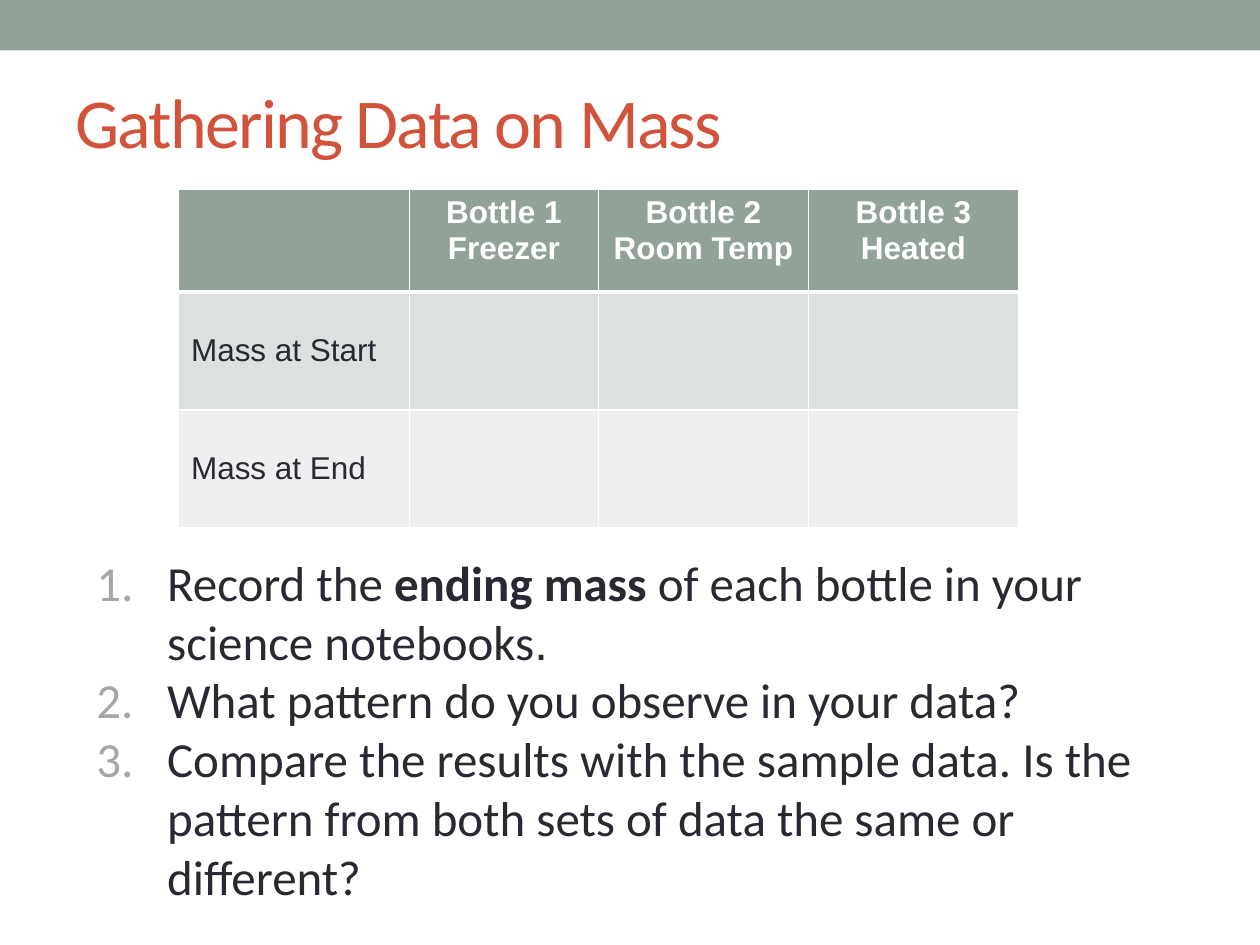
from lxml import etree
from pptx import Presentation
from pptx.dml.color import RGBColor
from pptx.enum import shapes, text
from pptx.oxml import ns
from pptx.util import Pt

SAGE, RUST, INK, WHITE, GREY = "93A299", "D2533C", "292934", "FFFFFF", "A6A6A6"

TITLE = "Gathering Data on Mass"
HEADINGS = ["", "Bottle 1\nFreezer", "Bottle 2\nRoom Temp", "Bottle 3\nHeated"]
ROW_LABELS = ["Mass at Start", "Mass at End"]
COLUMN_WIDTHS = [132, 108, 120, 120]
ROW_HEIGHTS = [58.8, 67.5, 67.5]
ROW_FILLS = [SAGE, "DCE0DE", "EEF0EF"]
# Each step is a list of (words, font, bold)
STEPS = [
    [("Record the ", "Calibri", False), ("ending mass ", "Calibri", True),
     ("of each bottle in your science notebooks", "Calibri", False), (".", "Arial", False)],
    [("What pattern do you observe in your data?", "Calibri", False)],
    [("Compare the results with the sample data. Is the pattern from both sets "
      "of data the same or different?", "Calibri", False)],
]


def color(value):
    return RGBColor.from_string(value)


def add_element(parent, tag, **attributes):
    return etree.SubElement(parent, ns.qn(tag), attributes)


def set_font(font, name, size, value, bold=False):
    font.name, font.size, font.bold = name, Pt(size), bold
    font.color.rgb = color(value)


def add_text_frame(slide, left, top, width, height):
    frame = slide.shapes.add_textbox(Pt(left), Pt(top), Pt(width), Pt(height)).text_frame
    frame.word_wrap = True
    return frame


def add_borders(cell, row):
    """Draw white cell borders, with a thick line between header and body."""
    widths = {"L": 1, "R": 1, "T": 3 if row == 1 else 1, "B": 3 if row == 0 else 1}
    properties = cell._tc.get_or_add_tcPr()
    for side, width in widths.items():
        line = add_element(properties, f"a:ln{side}", w=str(Pt(width)))
        add_element(add_element(line, "a:solidFill"), "a:srgbClr", val=WHITE)


def add_mass_table(slide):
    rows = [HEADINGS] + [[label, "", "", ""] for label in ROW_LABELS]
    table = slide.shapes.add_table(
        len(rows), len(HEADINGS), Pt(102), Pt(108),
        Pt(sum(COLUMN_WIDTHS)), Pt(sum(ROW_HEIGHTS))).table
    for column, width in zip(table.columns, COLUMN_WIDTHS):
        column.width = Pt(width)
    for r, words in enumerate(rows):
        header = r == 0
        table.rows[r].height = Pt(ROW_HEIGHTS[r])
        for c, label in enumerate(words):
            cell = table.cell(r, c)
            add_borders(cell, r)
            cell.fill.solid()
            cell.fill.fore_color.rgb = color(ROW_FILLS[r])
            cell.vertical_anchor = text.MSO_ANCHOR.TOP if header else text.MSO_ANCHOR.MIDDLE
            cell.text = label
            for paragraph in cell.text_frame.paragraphs:
                paragraph.alignment = text.PP_ALIGN.CENTER if header else text.PP_ALIGN.LEFT
                set_font(paragraph.font, "Arial", 18, WHITE if header else INK, header)


def number_paragraph(paragraph):
    properties = paragraph._p.get_or_add_pPr()
    indent = Pt(40.5)
    properties.set("marL", str(indent))
    properties.set("indent", str(-indent))
    add_element(add_element(properties, "a:buClr"), "a:srgbClr", val=GREY)
    add_element(properties, "a:buFont", typeface="Calibri")
    add_element(properties, "a:buAutoNum", type="arabicPeriod")


def add_steps(slide):
    frame = add_text_frame(slide, 48, 312, 642, 211)
    for i, step in enumerate(STEPS):
        paragraph = frame.add_paragraph() if i else frame.paragraphs[0]
        number_paragraph(paragraph)
        for words, font_name, bold in step:
            run = paragraph.add_run()
            run.text = words
            set_font(run.font, font_name, 28, INK, bold)


def main():
    deck = Presentation()
    deck.slide_width, deck.slide_height = Pt(720), Pt(540)
    slide = deck.slides.add_slide(deck.slide_layouts[6])

    band = slide.shapes.add_shape(shapes.MSO_SHAPE.RECTANGLE, 0, 0, Pt(720), Pt(28.8))
    band.shadow.inherit = False
    band.fill.solid()
    band.fill.fore_color.rgb = color(SAGE)
    band.line.fill.background()

    heading = add_text_frame(slide, 36, 30, 648, 78)
    heading.vertical_anchor = text.MSO_ANCHOR.MIDDLE
    title_run = heading.paragraphs[0].add_run()
    title_run.text = TITLE
    set_font(title_run.font, "Calibri", 40, RUST)
    title_run._r.get_or_add_rPr().set("spc", "-100")

    add_mass_table(slide)
    add_steps(slide)
    deck.save("out.pptx")


if __name__ == "__main__":
    main()
